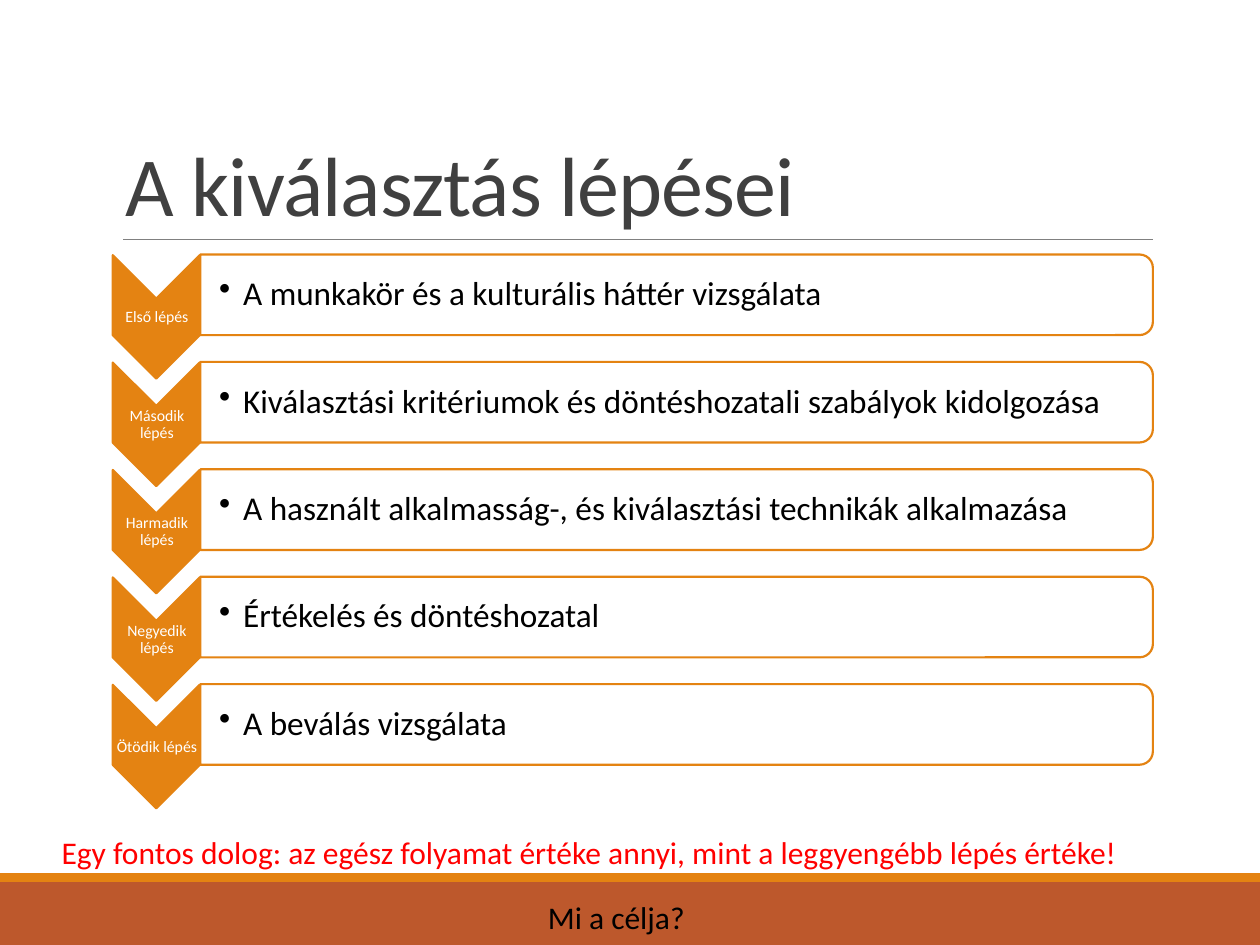
from lxml.etree import SubElement
from pptx import Presentation
from pptx.dml.color import RGBColor
from pptx.enum.shapes import MSO_CONNECTOR, MSO_SHAPE
from pptx.enum.text import MSO_ANCHOR, PP_ALIGN
from pptx.oxml.ns import qn
from pptx.util import Inches, Pt

ORANGE = RGBColor(0xE4, 0x83, 0x12)
RUST = RGBColor(0xBD, 0x58, 0x2C)
GRAY = RGBColor(0x80, 0x80, 0x80)
DARK = RGBColor(0x40, 0x40, 0x40)
RED = RGBColor(0xFF, 0x00, 0x00)
BLACK = RGBColor(0x00, 0x00, 0x00)
WHITE = RGBColor(0xFF, 0xFF, 0xFF)

STEPS = [
    ("Első lépés", "A munkakör és a kulturális háttér vizsgálata"),
    ("Második lépés", "Kiválasztási kritériumok és döntéshozatali szabályok kidolgozása"),
    ("Harmadik lépés", "A használt alkalmasság-, és kiválasztási technikák alkalmazása"),
    ("Negyedik lépés", "Értékelés és döntéshozatal"),
    ("Ötödik lépés", "A beválás vizsgálata"),
]
FIRST_TOP, LAST_TOP = 2.17, 5.58
PITCH = (LAST_TOP - FIRST_TOP) / (len(STEPS) - 1)


class SlideBuilder:
    font = "Calibri"

    def __init__(self, slide):
        self.slide = slide

    def shape(self, kind, x, y, w, h, fill, line=None, rotation=0, alpha=None):
        """Add a preset shape; alpha is its opacity in percent."""
        sp = self.slide.shapes.add_shape(kind, Inches(x), Inches(y), Inches(w), Inches(h))
        sp.shadow.inherit = False
        sp.rotation = rotation
        sp.fill.solid()
        sp.fill.fore_color.rgb = fill
        if alpha is not None:
            color = sp._element.spPr.find(qn("a:solidFill"))[0]
            SubElement(color, qn("a:alpha"), val=str(alpha * 1000))
        if line is None:
            sp.line.fill.background()
        else:
            sp.line.color.rgb = line
            sp.line.width = Pt(1.25)

    def rule(self, x1, x2, y):
        """Add a thin horizontal line."""
        line = self.slide.shapes.add_connector(
            MSO_CONNECTOR.STRAIGHT, Inches(x1), Inches(y), Inches(x2), Inches(y))
        line.line.color.rgb = GRAY
        line.line.width = Pt(0.5)
        SubElement(line._element.spPr, qn("a:effectLst"))

    def text(self, text, x, y, w, h, size, color, anchor=MSO_ANCHOR.TOP,
             align=PP_ALIGN.LEFT, insets=None, spacing=None, wrap=True):
        """Add a one-paragraph text box and return the paragraph."""
        tf = self.slide.shapes.add_textbox(
            Inches(x), Inches(y), Inches(w), Inches(h)).text_frame
        tf.word_wrap = wrap
        tf.vertical_anchor = anchor
        if insets:
            tf.margin_left, tf.margin_top, tf.margin_right, tf.margin_bottom = map(Inches, insets)
        p = tf.paragraphs[0]
        p.text = text
        p.alignment = align
        if spacing:
            p.line_spacing = spacing
        p.font.name = self.font
        p.font.size = Pt(size)
        p.font.color.rgb = color
        return p

    def title(self, text):
        p = self.text(text, 0.9, 0.31, 8.25, 1.59, 48, DARK,
                      anchor=MSO_ANCHOR.BOTTOM, spacing=0.85)
        p.runs[0].font._element.set("spc", "-50")

    def bullet(self, text, x, y, w, h):
        p = self.text(text, x, y, w, h, 19, BLACK, anchor=MSO_ANCHOR.MIDDLE,
                      insets=(0.15, 0.01, 0.01, 0.01), spacing=0.9)
        pPr = p._p.get_or_add_pPr()
        indent = Inches(0.19)
        pPr.set("marL", str(indent))
        pPr.set("indent", str(-indent))
        bullet = pPr.makeelement(qn("a:buChar"), {"char": "•"})
        pPr.find(qn("a:lnSpc")).addnext(bullet)

    def step(self, label, description, top):
        """Add one row: a downward chevron with its label, and a panel."""
        self.shape(MSO_SHAPE.CHEVRON, 0.75, top, 0.98, 0.69, ORANGE, ORANGE, rotation=90)
        self.text(label, 0.9, top + 0.2, 0.69, 0.3, 9, WHITE, anchor=MSO_ANCHOR.MIDDLE,
                  align=PP_ALIGN.CENTER, insets=(0.01,) * 4, spacing=0.9)
        self.shape(MSO_SHAPE.ROUND_2_SAME_RECTANGLE, 5.05, top - 3.61, 0.64, 7.56,
                   WHITE, ORANGE, rotation=90, alpha=90)
        self.bullet(description, 1.59, top - 0.12, 7.53, 0.58)


def main():
    prs = Presentation()
    prs.slide_width, prs.slide_height = Inches(10), Inches(7.5)
    s = SlideBuilder(prs.slides.add_slide(prs.slide_layouts[6]))

    s.shape(MSO_SHAPE.RECTANGLE, 0, 7, 10, 0.5, RUST)
    s.shape(MSO_SHAPE.RECTANGLE, 0, 6.93, 10, 0.07, ORANGE)
    s.rule(0.98, 9.15, 1.9)
    s.title("A kiválasztás lépései")
    for i, (label, description) in enumerate(STEPS):
        s.step(label, description, FIRST_TOP + i * PITCH)
    s.text("Egy fontos dolog: az egész folyamat értéke annyi, mint a leggyengébb lépés értéke!",
           0.39, 6.56, 9.26, 0.4, 18, RED, wrap=False)
    s.text("Mi a célja?", 4.25, 7.08, 1.5, 0.4, 18, BLACK)

    prs.save("out.pptx")


if __name__ == "__main__":
    main()
